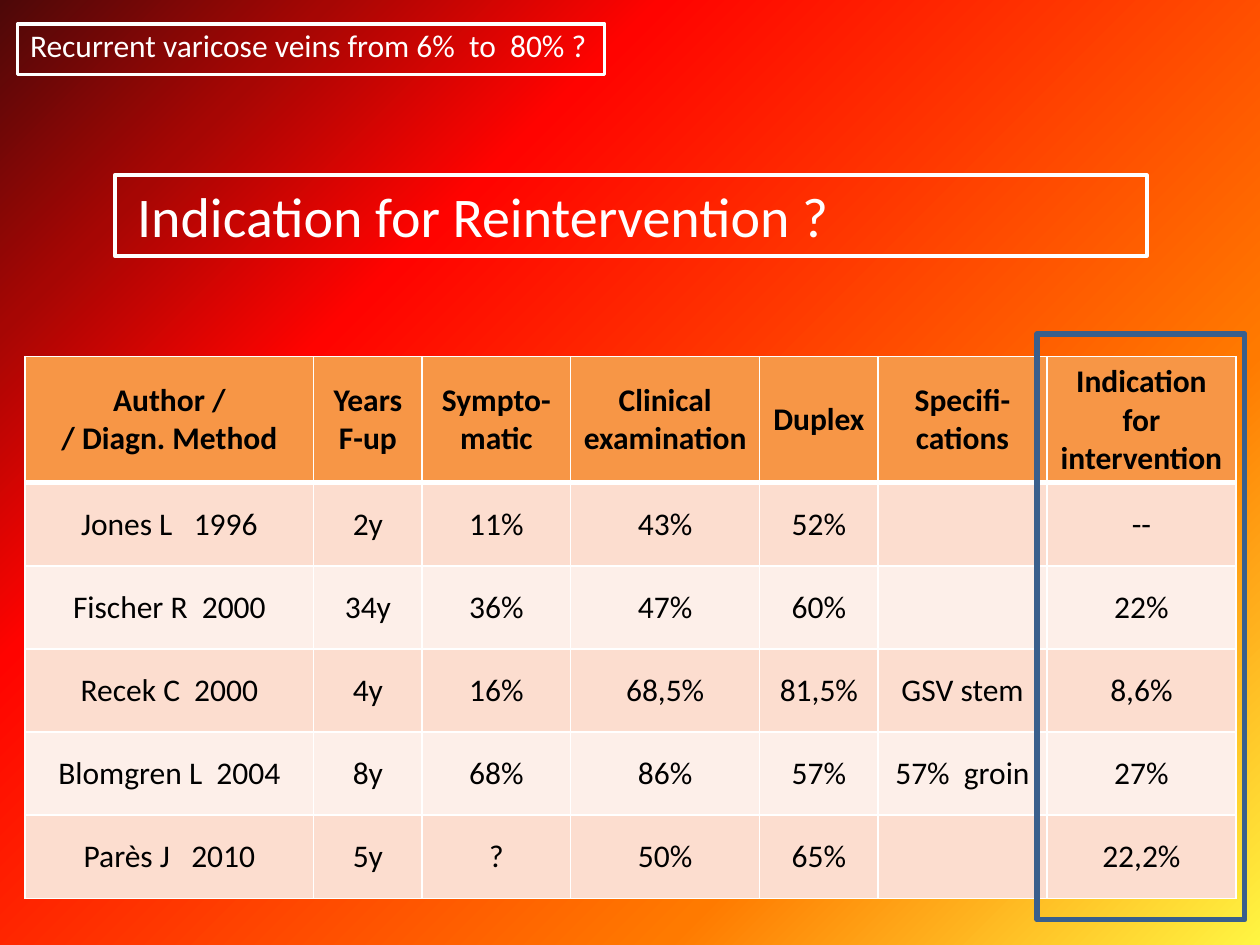
import pptx
import pptx.util
import pptx.dml.color
import pptx.enum.shapes
import pptx.enum.text
import pptx.oxml
import pptx.oxml.ns

FONT = "Calibri"
WHITE, BLACK, ORANGE, BLUE = "FFFFFF", "000000", "F79646", "3A5F8C"
BANDS = ("FCDDCF", "FDEFE9")
BACKGROUND_STOPS = [(0, "FFF542"), (27, "FF7A00"), (70, "FF0300"), (85, "A60604"), (100, "4D0808")]

TOPIC = "Recurrent varicose veins from 6%  to  80% ?"
TITLE = "Indication for Reintervention ?"
HEADER = ["Author /\n/ Diagn. Method", "Years\nF-up", "Sympto-\nmatic", "Clinical examination",
          "Duplex", "Specifi-\ncations", "Indication\nfor intervention"]
STUDIES = [
    ["Jones L   1996", "2y", "11%", "43%", "52%", "", "--"],
    ["Fischer R  2000", "34y", "36%", "47%", "60%", "", "22%"],
    ["Recek C  2000", "4y", "16%", "68,5%", "81,5%", "GSV stem", "8,6%"],
    ["Blomgren L  2004", "8y", "68%", "86%", "57%", "57%  groin", "27%"],
    ["Parès J   2010", "5y", "?", "50%", "65%", "", "22,2%"],
]
COLUMN_WIDTHS = [2.29, 0.86, 1.18, 1.5, 0.94, 1.34, 1.5]
HEADER_HEIGHT, STUDY_HEIGHT = 0.77, 0.66
TABLE_LEFT, TABLE_TOP, TABLE_HEIGHT = 0.2, 2.83, 4.31


def color(value):
    return pptx.dml.color.RGBColor.from_string(value)


def inches(*lengths):
    return [pptx.util.Inches(length) for length in lengths]


def drawing_xml(text):
    return pptx.oxml.parse_xml(text.replace(">", f" {pptx.oxml.ns.nsdecls('a')}>", 1))


def paint_background(page):
    fill = page.background.fill
    fill.gradient()
    fill.gradient_angle = 135
    stops = "".join(f'<a:gs pos="{share * 1000}"><a:srgbClr val="{value}"/></a:gs>'
                    for share, value in BACKGROUND_STOPS)
    old_stops = page.background.fill._fill._gradFill.find(pptx.oxml.ns.qn("a:gsLst"))
    old_stops.getparent().replace(old_stops, drawing_xml(f"<a:gsLst>{stops}</a:gsLst>"))


def add_frame(shapes, place, line_color, line_width):
    """Add an unfilled outlined rectangle."""
    frame = shapes.add_shape(pptx.enum.shapes.MSO_SHAPE.RECTANGLE, *inches(*place))
    frame.shadow.inherit = False
    frame.fill.background()
    frame.line.color.rgb = color(line_color)
    frame.line.width = pptx.util.Pt(line_width)


def format_text(text_frame, size, text_color, bold=False, align=None):
    for para in text_frame.paragraphs:
        para.alignment = align
        for span in para.runs:
            span.font.name = FONT
            span.font.size = pptx.util.Pt(size)
            span.font.bold = bold
            span.font.color.rgb = color(text_color)


def add_label(shapes, place, text, size, wrap):
    box = shapes.add_textbox(*inches(*place))
    box.text_frame.word_wrap = wrap
    box.text_frame.auto_size = pptx.enum.text.MSO_AUTO_SIZE.SHAPE_TO_FIT_TEXT
    box.text_frame.text = text
    format_text(box.text_frame, size, WHITE)


def set_borders(cell, top, bottom):
    properties = cell._tc.get_or_add_tcPr()
    for side, points in (("L", 1), ("R", 1), ("T", top), ("B", bottom)):
        properties.append(drawing_xml(
            f'<a:ln{side} w="{pptx.util.Pt(points)}"><a:solidFill><a:srgbClr val="{WHITE}"/>'
            f"</a:solidFill></a:ln{side}>"))


def add_study_table(page):
    rows = [HEADER] + STUDIES
    place = inches(TABLE_LEFT, TABLE_TOP, sum(COLUMN_WIDTHS), TABLE_HEIGHT)
    table = page.shapes.add_table(len(rows), len(HEADER), *place).table
    for column, width in zip(table.columns, COLUMN_WIDTHS):
        column.width = pptx.util.Inches(width)
    for r, texts in enumerate(rows):
        is_header = r == 0
        table.rows[r].height = pptx.util.Inches(HEADER_HEIGHT if is_header else STUDY_HEIGHT)
        for c, text in enumerate(texts):
            cell = table.cell(r, c)
            set_borders(cell, top=3 if r == 1 else 1, bottom=3 if is_header else 1)
            cell.fill.solid()
            cell.fill.fore_color.rgb = color(ORANGE if is_header else BANDS[(r - 1) % 2])
            cell.vertical_anchor = pptx.enum.text.MSO_ANCHOR.MIDDLE
            cell.text_frame.text = text
            format_text(cell.text_frame, 18, BLACK, is_header, pptx.enum.text.PP_ALIGN.CENTER)


def main():
    deck = pptx.Presentation()
    deck.slide_width, deck.slide_height = inches(10, 7.5)
    page = deck.slides.add_slide(deck.slide_layouts[6])
    paint_background(page)

    topic = page.shapes.add_group_shape()
    add_frame(topic.shapes, (0.14, 0.19, 4.66, 0.4), WHITE, 2)
    add_label(topic.shapes, (0.14, 0.16, 4.67, 0.4), TOPIC, 18, wrap=False)

    add_label(page.shapes, (0.99, 1.39, 8.1, 0.64), TITLE, 32, wrap=True)
    add_frame(page.shapes, (0.91, 1.39, 8.19, 0.64), WHITE, 2.25)

    add_study_table(page)
    add_frame(page.shapes, (8.23, 2.65, 1.65, 4.65), BLUE, 3)
    deck.save("out.pptx")


if __name__ == "__main__":
    main()
